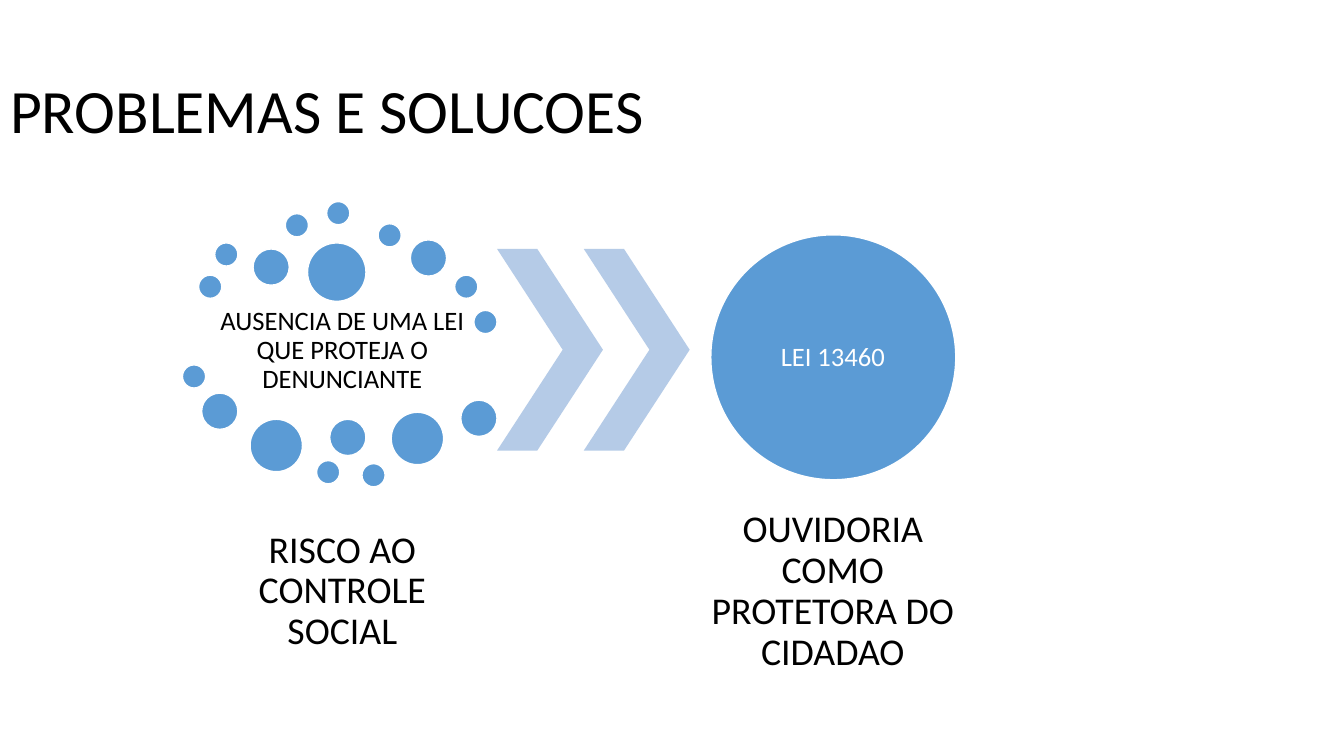
import pptx
import pptx.dml.color
import pptx.enum.shapes
import pptx.enum.text
import pptx.util

Inches = pptx.util.Inches
Pt = pptx.util.Pt
Shapes = pptx.enum.shapes.MSO_SHAPE
Align = pptx.enum.text.PP_ALIGN

SMALL, MEDIUM, LARGE, LARGEST = 0.23, 0.36, 0.52, 0.58
BUBBLES = {
    SMALL: [(1.97, 2.73), (2.13, 2.41), (2.83, 2.12), (3.24, 2), (3.75, 2.22),
            (4.51, 2.73), (4.7, 3.08), (1.81, 3.62), (3.14, 4.57), (3.59, 4.6)],
    MEDIUM: [(2.51, 2.47), (4.07, 2.38), (2, 3.9), (3.27, 4.16), (4.57, 3.97)],
    LARGE: [(2.48, 4.16), (3.88, 4.09)],
    LARGEST: [(3.05, 2.41)],
}


def colour(value):
    return pptx.dml.color.RGBColor.from_string(value)


class Page:
    """Holds the style and the slide on which elements are placed."""

    font = "Calibri"
    blue, pale, white, black = "5B9BD5", "B5CBE7", "FFFFFF", "000000"

    def __init__(self, deck):
        self.slide = deck.slides.add_slide(deck.slide_layouts[5])

    def fill_text(self, box, words, size, ink, align):
        frame = box.text_frame
        frame.word_wrap = True
        frame.auto_size = pptx.enum.text.MSO_AUTO_SIZE.NONE
        frame.vertical_anchor = pptx.enum.text.MSO_ANCHOR.MIDDLE
        para = frame.paragraphs[0]
        para.alignment = align
        para.line_spacing = 0.9
        span = para.add_run()
        span.text = words
        span.font.name = self.font
        span.font.size = Pt(size)
        span.font.color.rgb = colour(ink)

    def title(self, words, left, top, width, height):
        box = self.slide.shapes.title
        box.left, box.top = Inches(left), Inches(top)
        box.width, box.height = Inches(width), Inches(height)
        self.fill_text(box, words, 44, self.black, Align.LEFT)

    def label(self, words, left, top, width, height, size, inset, ink=black):
        box = self.slide.shapes.add_textbox(
            Inches(left), Inches(top), Inches(width), Inches(height))
        frame = box.text_frame
        frame.margin_left = frame.margin_right = Inches(inset)
        frame.margin_top = frame.margin_bottom = Inches(inset)
        self.fill_text(box, words, size, ink, Align.CENTER)

    def shape(self, kind, left, top, width, height, fill):
        item = self.slide.shapes.add_shape(
            kind, Inches(left), Inches(top), Inches(width), Inches(height))
        item.shadow.inherit = False
        item.fill.solid()
        item.fill.fore_color.rgb = colour(fill)
        item.line.fill.background()
        return item

    def circle(self, left, top, size):
        item = self.shape(Shapes.OVAL, left, top, size, size, self.blue)
        item.line.color.rgb = colour(self.white)
        item.line.width = Pt(1)

    def chevron(self, left, top, width, height):
        item = self.shape(Shapes.CHEVRON, left, top, width, height, self.pale)
        item.adjustments[0] = 0.62


def main():
    deck = pptx.Presentation()
    deck.slide_width, deck.slide_height = Inches(13.33), Inches(7.5)
    page = Page(deck)
    page.title("PROBLEMAS E SOLUCOES", 0, 0.4, 11.5, 1.45)

    page.label("AUSENCIA DE UMA LEI QUE PROTEJA O DENUNCIANTE",
               1.97, 3.01, 2.85, 0.94, 19, 0.03)
    page.label("RISCO AO CONTROLE SOCIAL", 1.97, 4.99, 2.85, 1.76, 27, 0.04)
    for size, places in BUBBLES.items():
        for left, top in places:
            page.circle(left, top, size)

    for left in (4.93, 5.79):
        page.chevron(left, 2.47, 1.05, 2)

    page.circle(7.05, 2.33, 2.43)
    page.label("LEI 13460", 7.4, 2.69, 1.72, 1.72, 19, 0, page.white)
    page.label("OUVIDORIA COMO PROTETORA DO CIDADAO",
               6.83, 4.99, 2.86, 1.76, 27, 0.04)
    deck.save("out.pptx")


if __name__ == "__main__":
    main()
